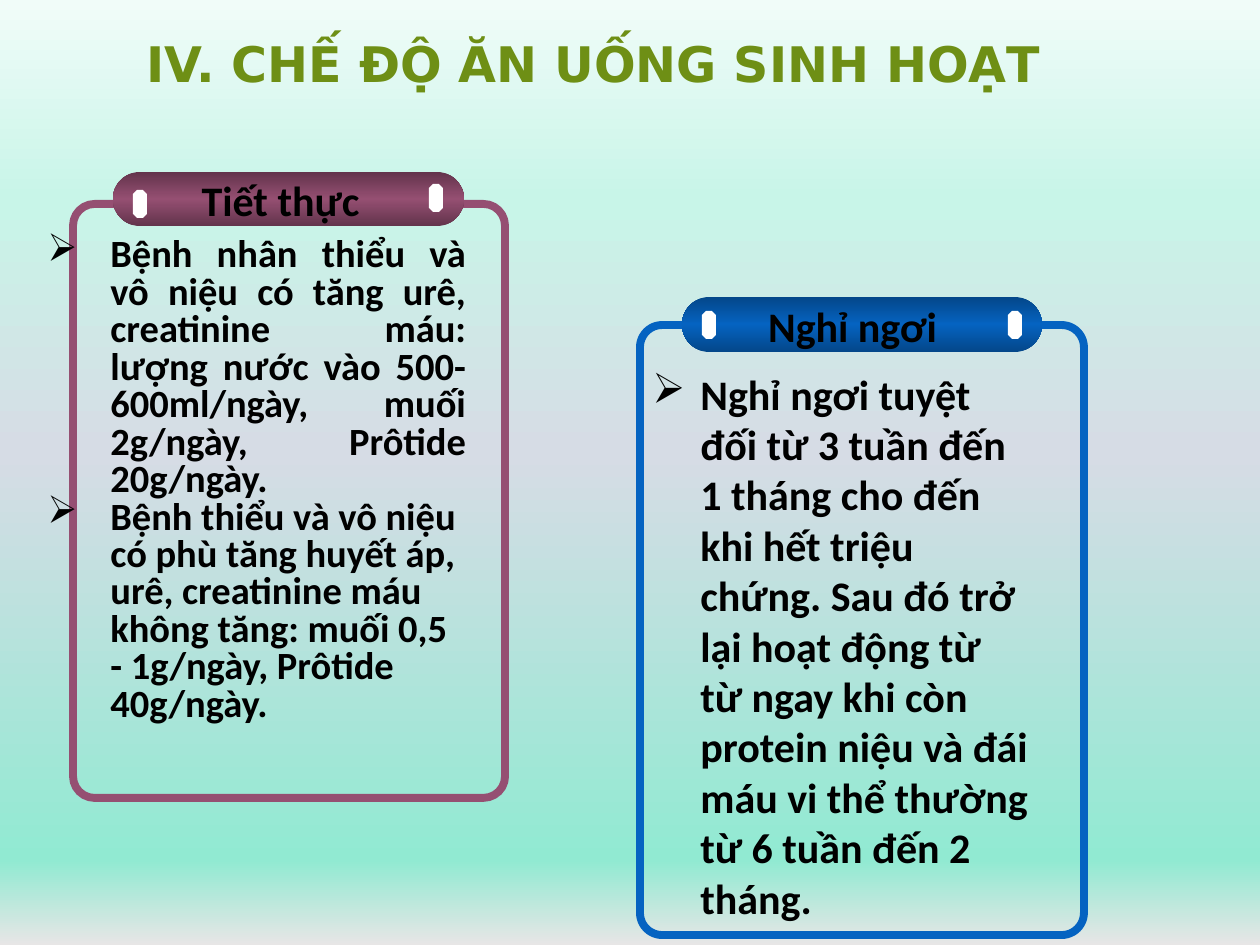
from dataclasses import dataclass

from lxml.etree import SubElement
from pptx import Presentation
from pptx.dml.color import RGBColor
from pptx.enum.shapes import MSO_SHAPE
from pptx.enum.text import MSO_ANCHOR, PP_ALIGN
from pptx.oxml.ns import qn
from pptx.util import Emu, Pt


@dataclass(frozen=True)
class Theme:
    title_font: str = "DejaVu Sans"
    body_font: str = "Calibri"
    title_size: int = 28
    heading_size: int = 24
    frame_line: float = 4.5
    title: str = "6E8F15"
    ink: str = "000000"
    white: str = "FFFFFF"
    backdrop: tuple = ((0, "F1FCF9"), (21, "C8F5E8"), (48, "D6DCE5"),
                       (91, "91EAD2"), (100, "E7E6E6"))


THEME = Theme()
SLIDE = (1260, 945)
TITLE = "IV. CHẾ ĐỘ ĂN UỐNG SINH HOẠT"
TITLE_BOX = (134, 35, 997, 63)
STUD = (14, 28)

PANELS = [
    {
        "heading": "Tiết thực", "heading_box": (188, 168, 185, 63),
        "color": "954F72", "shade": "63344C",
        "frame": (73, 204, 432, 594), "cap": (113, 172, 351, 54),
        "studs": [(429, 184), (133, 190)],
        "body": (35, 232, 473, 570), "right_inset": 42,
        "size": 22, "line_height": 21.4, "indent": 63,
        "advice": [
            ("Bệnh nhân thiểu và vô niệu có tăng urê, creatinine máu: lượng nước vào "
             "500-600ml/ngày, muối 2g/ngày, Prôtide 20g/ngày.", PP_ALIGN.JUSTIFY),
            ("Bệnh thiểu và vô niệu có phù tăng huyết áp, urê, creatinine máu không tăng: "
             "muối 0,5 - 1g/ngày, Prôtide 40g/ngày.", PP_ALIGN.LEFT),
        ],
    },
    {
        "heading": "Nghỉ ngơi", "heading_box": (755, 294, 195, 63),
        "color": "0563C1", "shade": "04478A",
        "frame": (640, 325, 444, 610), "cap": (682, 297, 360, 55),
        "studs": [(1008, 311), (702, 311)],
        "body": (640, 362, 403, 572), "right_inset": 13,
        "size": 24, "line_height": None, "indent": 48,
        "advice": [
            ("Nghỉ ngơi tuyệt đối từ 3 tuần đến 1 tháng cho đến khi hết triệu chứng. "
             "Sau đó trở lại hoạt động từ từ ngay khi còn protein niệu và đái máu vi thể "
             "thường từ 6 tuần đến 2 tháng.", PP_ALIGN.LEFT),
        ],
    },
]


def px(length):
    return Emu(length * 914400 // 126)


def place(box):
    return [px(length) for length in box]


def rgb(color):
    return RGBColor.from_string(color)


def vertical_gradient(owner, fill, stops):
    fill.gradient()
    gradient = owner.element.find(".//" + qn("a:gradFill"))
    for child in list(gradient):
        gradient.remove(child)
    stop_list = SubElement(gradient, qn("a:gsLst"))
    for position, color in stops:
        stop = SubElement(stop_list, qn("a:gs"), pos=str(position * 1000))
        SubElement(stop, qn("a:srgbClr"), val=color)
    SubElement(gradient, qn("a:lin"), ang="5400000", scaled="0")


def add_plain(shapes, preset, box, adjustment):
    shape = shapes.add_shape(preset, *place(box))
    shape.shadow.inherit = False
    shape.adjustments[0] = adjustment
    shape.fill.background()
    shape.line.fill.background()
    return shape


def add_text(shapes, box, lines, size, font=THEME.body_font, color=THEME.ink, wrap=True):
    frame = shapes.add_textbox(*place(box)).text_frame
    frame.word_wrap = wrap
    frame.text = "\n".join(lines)
    for paragraph in frame.paragraphs:
        for run in paragraph.runs:
            run.font.name = font
            run.font.size = Pt(size)
            run.font.bold = True
            run.font.color.rgb = rgb(color)
    return frame


def add_bullet(paragraph, indent):
    properties = paragraph._p.get_or_add_pPr()
    properties.set("marL", str(px(indent)))
    properties.set("indent", str(-px(indent)))
    bullet_color = SubElement(properties, qn("a:buClr"))
    SubElement(bullet_color, qn("a:srgbClr"), val=THEME.ink)
    SubElement(properties, qn("a:buChar"), char="➢")


def add_panel(slide, panel):
    shapes = slide.shapes.add_group_shape().shapes

    frame = add_plain(shapes, MSO_SHAPE.ROUNDED_RECTANGLE, panel["frame"], 0.05)
    frame.line.color.rgb = rgb(panel["color"])
    frame.line.width = Pt(THEME.frame_line)

    cap = add_plain(shapes, MSO_SHAPE.ROUNDED_RECTANGLE, panel["cap"], 0.5)
    shade, color = panel["shade"], panel["color"]
    vertical_gradient(cap, cap.fill, [(0, shade), (50, color), (100, shade)])

    for corner in panel["studs"]:
        stud = add_plain(shapes, MSO_SHAPE.OCTAGON, corner + STUD, 0.29)
        stud.fill.solid()
        stud.fill.fore_color.rgb = rgb(THEME.white)

    heading = add_text(shapes, panel["heading_box"], [panel["heading"]],
                       THEME.heading_size, wrap=False)
    heading.paragraphs[0].alignment = PP_ALIGN.CENTER

    advice = panel["advice"]
    body = add_text(shapes, panel["body"], [line for line, _ in advice], panel["size"])
    body.margin_right = px(panel["right_inset"])
    for paragraph, (_, alignment) in zip(body.paragraphs, advice):
        paragraph.alignment = alignment
        if panel["line_height"]:
            paragraph.line_spacing = Pt(panel["line_height"])
        add_bullet(paragraph, panel["indent"])


def main():
    deck = Presentation()
    deck.slide_width, deck.slide_height = place(SLIDE)
    slide = deck.slides.add_slide(deck.slide_layouts[6])
    vertical_gradient(slide, slide.background.fill, THEME.backdrop)

    title = add_text(slide.shapes, TITLE_BOX, [TITLE], THEME.title_size,
                     THEME.title_font, THEME.title)
    title.vertical_anchor = MSO_ANCHOR.MIDDLE
    title.paragraphs[0].line_spacing = 0.9

    for panel in PANELS:
        add_panel(slide, panel)
    deck.save("out.pptx")


if __name__ == "__main__":
    main()
